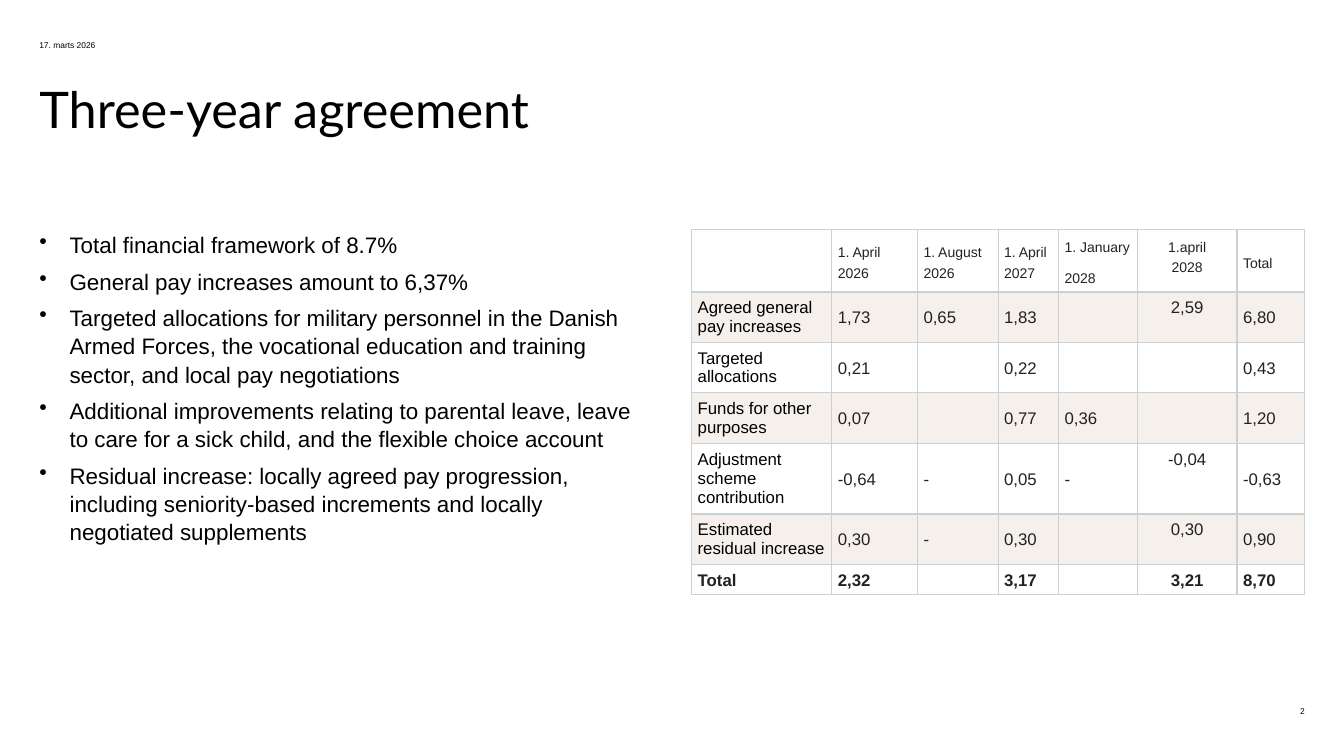
from dataclasses import dataclass

from lxml import etree
from pptx import Presentation
from pptx import util as u
from pptx.dml.color import RGBColor
from pptx.enum import text
from pptx.oxml import ns

EMU_PER_PX = 9144  # 100 px to the inch


@dataclass(frozen=True)
class Theme:
    heading_font: str = "Lato"
    body_font: str = "Arial"
    black: str = "000000"
    grey: str = "222222"
    band: str = "F5F0EB"
    border: str = "CAD1D5"
    title_size: int = 36
    body_size: int = 16
    cell_size: int = 12
    header_size: int = 10
    small_size: int = 6


@dataclass(frozen=True)
class Area:
    left: int
    top: int
    width: int
    height: int

    def emu(self) -> list[u.Emu]:
        return [px(n) for n in (self.left, self.top, self.width, self.height)]


@dataclass(frozen=True)
class Style:
    size: int
    font: str = "Arial"
    color: str = "000000"
    bold: bool = False
    align: text.PP_ALIGN = text.PP_ALIGN.LEFT
    line_spacing: float | u.Length | None = None


THEME = Theme()
BULLETS = [
    "Total financial framework of 8.7%",
    "General pay increases amount to 6,37%",
    "Targeted allocations for military personnel in the Danish Armed Forces, "
    "the vocational education and training sector, and local pay negotiations",
    "Additional improvements relating to parental leave, leave to care for a sick child, "
    "and the flexible choice account",
    "Residual increase: locally agreed pay progression, including seniority-based increments "
    "and locally negotiated supplements",
]
COLUMN_WIDTHS = [139, 85, 80, 60, 78, 99, 67]
ROW_HEIGHTS = [61, 48, 48, 48, 65, 48, 30]
PAY_ROWS = [
    ["", "1. April 2026", "1. August 2026", "1. April 2027", "1. January\n2028", "1.april\v2028", "Total"],
    ["Agreed general pay increases", "1,73", "0,65", "1,83", "", "2,59", "6,80"],
    ["Targeted allocations", "0,21", "", "0,22", "", "", "0,43"],
    ["Funds for other purposes", "0,07", "", "0,77", "0,36", "", "1,20"],
    ["Adjustment scheme contribution", "-0,64", "-", "0,05", "-", "-0,04", "-0,63"],
    ["Estimated residual increase", "0,30", "-", "0,30", "", "0,30", "0,90"],
    ["Total", "2,32", "", "3,17", "", "3,21", "8,70"],
]
TOTAL_ROW = len(PAY_ROWS) - 1
APRIL_2028_COLUMN = 5


def px(count: int) -> u.Emu:
    return u.Emu(count * EMU_PER_PX)


def apply_style(para, style: Style) -> None:
    para.alignment = style.align
    if style.line_spacing is not None:
        para.line_spacing = style.line_spacing
    para.font.size = u.Pt(style.size)
    para.font.name = style.font
    para.font.bold = style.bold
    para.font.color.rgb = RGBColor.from_string(style.color)


def add_text(page, area: Area, content: str, style: Style, anchor=text.MSO_ANCHOR.TOP):
    frame = page.shapes.add_textbox(*area.emu()).text_frame
    frame.word_wrap = True
    frame.vertical_anchor = anchor
    frame.margin_left = frame.margin_top = frame.margin_right = frame.margin_bottom = 0
    frame.text = content
    for para in frame.paragraphs:
        apply_style(para, style)
    return frame


def add_bullets(page, area: Area) -> None:
    frame = add_text(page, area, "\n".join(BULLETS), Style(THEME.body_size, line_spacing=1.05))
    for index, para in enumerate(frame.paragraphs):
        properties = para._p.get_or_add_pPr()
        properties.set("marL", str(px(30)))
        properties.set("indent", str(px(-30)))
        bullet = etree.Element(ns.qn("a:buChar"), char="•")
        properties.find(ns.qn("a:defRPr")).addprevious(bullet)
        para.space_before = u.Pt(3 if index else 0)
        para.space_after = u.Pt(3)


def draw_borders(cell, bottom_width: float) -> None:
    properties = cell._tc.get_or_add_tcPr()
    for side, width in {"L": 1, "R": 1, "T": 1, "B": bottom_width}.items():
        line = etree.SubElement(properties, ns.qn(f"a:ln{side}"), w=str(u.Pt(width)))
        fill = etree.SubElement(line, ns.qn("a:solidFill"))
        etree.SubElement(fill, ns.qn("a:srgbClr"), val=THEME.border)


def cell_style(row: int, column: int) -> Style:
    is_label = column == 0 and row < TOTAL_ROW
    return Style(
        size=THEME.cell_size if row else THEME.header_size,
        color=THEME.black if is_label else THEME.grey,
        bold=row == TOTAL_ROW,
        align=text.PP_ALIGN.CENTER if column == APRIL_2028_COLUMN else text.PP_ALIGN.LEFT,
        line_spacing=None if is_label else u.Pt(14.6),
    )


def fill_cell(cell, content: str, row: int, column: int) -> None:
    draw_borders(cell, 0.75 if row == TOTAL_ROW else 1)
    if row % 2:
        cell.fill.solid()
        cell.fill.fore_color.rgb = RGBColor.from_string(THEME.band)
    else:
        cell.fill.background()
    cell.margin_left = cell.margin_right = px(6)
    cell.margin_top = cell.margin_bottom = px(5 if content else 0)
    top_aligned = column == APRIL_2028_COLUMN
    cell.vertical_anchor = text.MSO_ANCHOR.TOP if top_aligned else text.MSO_ANCHOR.MIDDLE
    cell.text = content
    paras = cell.text_frame.paragraphs
    for para in paras:
        apply_style(para, cell_style(row, column))
        if len(paras) > 1:
            para.space_after = u.Pt(8)


def add_pay_table(page, left: int, top: int) -> None:
    area = Area(left, top, sum(COLUMN_WIDTHS), sum(ROW_HEIGHTS))
    table = page.shapes.add_table(len(ROW_HEIGHTS), len(COLUMN_WIDTHS), *area.emu()).table
    table.first_row = table.horz_banding = False
    for column, width in zip(table.columns, COLUMN_WIDTHS):
        column.width = px(width)
    for row, height in zip(table.rows, ROW_HEIGHTS):
        row.height = px(height)
    for row, values in enumerate(PAY_ROWS):
        for column, content in enumerate(values):
            fill_cell(table.cell(row, column), content, row, column)


def main() -> None:
    deck = Presentation()
    deck.slide_width, deck.slide_height = px(1333), px(750)
    page = deck.slides.add_slide(deck.slide_layouts[6])
    title_style = Style(THEME.title_size, THEME.heading_font, line_spacing=0.83)
    add_text(page, Area(39, 88, 1255, 139), "Three-year agreement", title_style)
    add_bullets(page, Area(39, 228, 608, 242))
    add_pay_table(page, 686, 228)
    middle = text.MSO_ANCHOR.MIDDLE
    add_text(page, Area(39, 39, 108, 12), "17. marts 2026", Style(THEME.small_size), middle)
    number_style = Style(THEME.small_size, align=text.PP_ALIGN.RIGHT)
    add_text(page, Area(1256, 699, 38, 12), "2", number_style, middle)
    deck.save("out.pptx")


if __name__ == "__main__":
    main()
